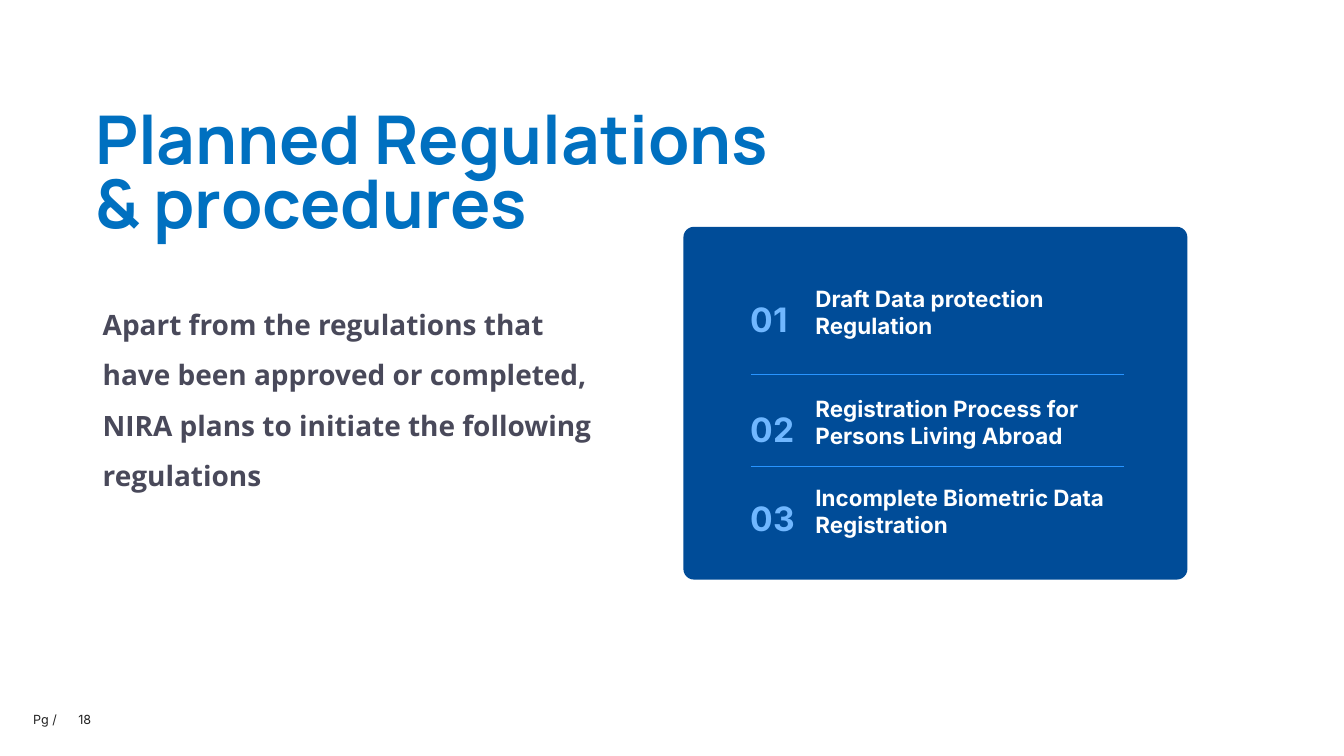
"""Build the slide on planned regulations and procedures."""
from dataclasses import dataclass

import lxml.etree
import pptx
import pptx.dml.color
import pptx.enum.shapes
import pptx.oxml.ns
import pptx.slide
import pptx.util

Pt = pptx.util.Pt

TITLE = {"name": "Manrope", "size": Pt(96), "bold": True}
BODY = {"name": "Open Sans", "size": Pt(40), "bold": True}
NUMBER = {"name": "Inter", "size": Pt(48), "bold": True}
ITEM = {"name": "Inter", "size": Pt(32), "bold": True}
FOOTER = {"name": "Inter", "size": Pt(18), "bold": False}


@dataclass
class TextBlock:
    left: float
    top: float
    width: float
    height: float
    lines: list[str]
    style: dict
    colour: str
    spacing: float = 1.0
    tab: float = 0


@dataclass
class Regulation:
    title: str
    top: float


BLOCKS = [
    TextBlock(129, 157.5, 1157, 290, ["Planned Regulations", "& procedures"], TITLE, "0070C0", 0.8),
    TextBlock(139.7, 411.8, 724.3, 290, [
        "Apart from the regulations that have been approved or completed, "
        "NIRA plans to initiate the following regulations"], BODY, "49495A", 1.5),
    TextBlock(40.3, 1013.8, 151, 29, ["Pg /\t18"], FOOTER, "222222", tab=64.5),
]
REGULATIONS = [
    Regulation("Draft Data protection Regulation", 404),
    Regulation("Registration Process for Persons Living Abroad", 561.5),
    Regulation("Incomplete Biometric Data Registration", 688.5),
]
DIVIDER_TOPS = [535, 665.3]


def rgb(value: str) -> pptx.dml.color.RGBColor:
    return pptx.dml.color.RGBColor.from_string(value)


def add_text(page: pptx.slide.Slide, block: TextBlock) -> None:
    box = page.shapes.add_textbox(Pt(block.left), Pt(block.top), Pt(block.width), Pt(block.height))
    frame = box.text_frame
    frame.word_wrap = True
    for index, line in enumerate(block.lines):
        para = frame.add_paragraph() if index else frame.paragraphs[0]
        para.line_spacing = block.spacing
        if block.tab:
            properties = para._p.get_or_add_pPr()
            stops = lxml.etree.SubElement(properties, pptx.oxml.ns.qn("a:tabLst"))
            lxml.etree.SubElement(stops, pptx.oxml.ns.qn("a:tab"), pos=str(Pt(block.tab)), algn="l")
        span = para.add_run()
        span.text = line
        for attribute, value in block.style.items():
            setattr(span.font, attribute, value)
        span.font.color.rgb = rgb(block.colour)


def add_panel(page: pptx.slide.Slide) -> None:
    panel = page.shapes.add_shape(
        pptx.enum.shapes.MSO_SHAPE.ROUNDED_RECTANGLE, Pt(976.3), Pt(324), Pt(720), Pt(504))
    panel.adjustments[0] = 0.03
    panel.shadow.inherit = False
    panel.fill.solid()
    panel.fill.fore_color.rgb = rgb("004C98")
    panel.line.fill.background()


def add_divider(page: pptx.slide.Slide, top: float) -> None:
    divider = page.shapes.add_connector(
        pptx.enum.shapes.MSO_CONNECTOR.STRAIGHT, Pt(1072.8), Pt(top), Pt(1606.3), Pt(top))
    divider.line.color.rgb = rgb("2894FF")
    divider.line.width = Pt(0.5)
    lxml.etree.SubElement(divider._element.spPr, pptx.oxml.ns.qn("a:effectLst"))


def add_regulation(page: pptx.slide.Slide, number: int, regulation: Regulation) -> None:
    add_text(page, TextBlock(1157.8, regulation.top, 497, 85, [regulation.title], ITEM, "FFFFFF"))
    add_text(page, TextBlock(
        1065, regulation.top - 9.5, 96.5, 84, [f"{number:02}"], NUMBER, "70B7FF", 1.5))


def main() -> None:
    deck = pptx.Presentation()
    deck.slide_width, deck.slide_height = Pt(1920), Pt(1080)
    page = deck.slides.add_slide(deck.slide_layouts[6])
    add_panel(page)
    for block in BLOCKS:
        add_text(page, block)
    for number, regulation in enumerate(REGULATIONS, 1):
        add_regulation(page, number, regulation)
    for top in DIVIDER_TOPS:
        add_divider(page, top)
    deck.save("out.pptx")


if __name__ == "__main__":
    main()
